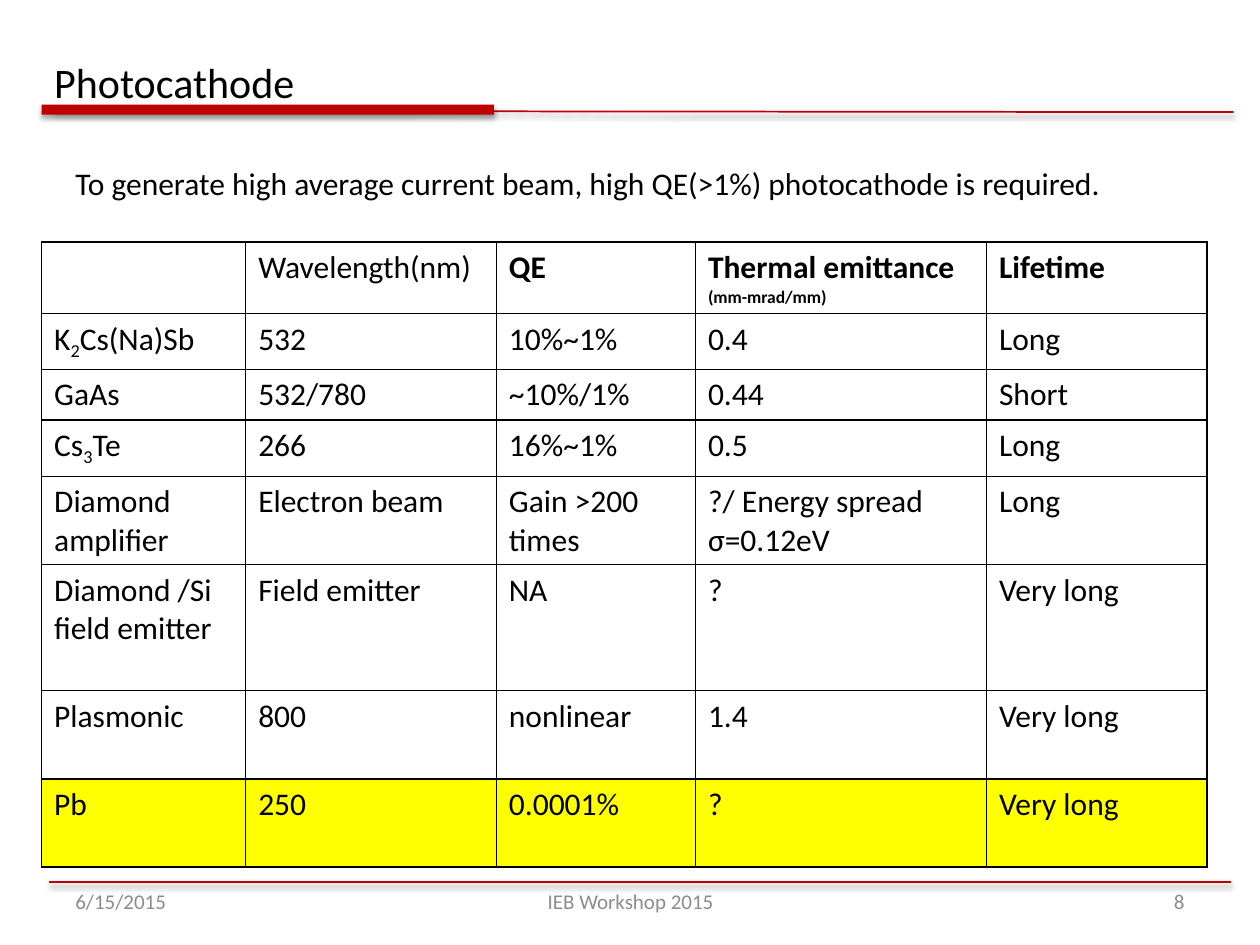
from dataclasses import dataclass
from lxml import etree
from pptx import Presentation
from pptx.dml.color import RGBColor as RGB
from pptx.enum.shapes import MSO_CONNECTOR as CONN, MSO_SHAPE as SHAPE
from pptx.enum.text import MSO_ANCHOR as ANCHOR, PP_ALIGN as ALIGN
from pptx.oxml import parse_xml
from pptx.oxml.ns import nsdecls, qn
from pptx.util import Inches, Pt


@dataclass(frozen=True)
class Theme:
    font: str = "Calibri"
    black: RGB = RGB(0, 0, 0)
    red: RGB = RGB(0xC0, 0, 0)
    gray: RGB = RGB(0x8C, 0x8C, 0x8C)
    yellow: RGB = RGB(0xFF, 0xFF, 0)
    title: int = 24
    body: int = 18
    footer: int = 12
    unit: int = 10


T = Theme()


def add_run(p, text, size=T.body, color=T.black, bold=False):
    r = p.add_run()
    r.text = text
    r.font.name, r.font.size, r.font.bold = T.font, Pt(size), bold
    r.font.color.rgb = color
    return r


def add_shadow(sp, dist, alpha):
    sp._element.spPr.append(parse_xml(
        f'<a:effectLst {nsdecls("a")}><a:outerShdw blurRad="{Pt(3.1)}" '
        f'dist="{Pt(dist)}" dir="5400000" rotWithShape="0"><a:srgbClr val="000000">'
        f'<a:alpha val="{alpha}000"/></a:srgbClr></a:outerShdw></a:effectLst>'))


prs = Presentation()
prs.slide_width, prs.slide_height = Inches(10), Inches(7.5)
s = prs.slides.add_slide(prs.slide_layouts[5])

# Red rules and title bar
for x1, y1, x2, y2 in [(0.42, 0.88, 9.79, 0.89), (0.39, 7, 9.77, 7)]:
    rule = s.shapes.add_connector(CONN.STRAIGHT, Inches(x1), Inches(y1), Inches(x2), Inches(y2))
    rule.line.color.rgb, rule.line.width = T.red, Pt(1)
    add_shadow(rule, 1.6, 38)
bar = s.shapes.add_shape(SHAPE.RECTANGLE, Inches(0.33), Inches(0.83), Inches(3.59), Inches(0.08))
bar.fill.solid()
bar.fill.fore_color.rgb = T.red
bar.line.fill.background()
add_shadow(bar, 1.8, 35)

# Title
title = s.shapes.title
title.left, title.top, title.width, title.height = (Inches(v) for v in (0.33, 0.42, 6.42, 0.45))
tf = title.text_frame
tf.vertical_anchor = ANCHOR.MIDDLE
p = tf.paragraphs[0]
p.alignment = ALIGN.LEFT
add_run(p, "Photocathode", T.title)

# Lead sentence and footer
texts = [
    (0.5, 1.25, 8.67, "To generate high average current beam, high QE(>1%) photocathode is required.",
     T.body, T.black, ALIGN.LEFT, ANCHOR.TOP),
    (0.5, 6.95, 2.33, "6/15/2015", T.footer, T.gray, ALIGN.LEFT, ANCHOR.MIDDLE),
    (3.42, 6.95, 3.17, "IEB Workshop 2015", T.footer, T.gray, ALIGN.CENTER, ANCHOR.MIDDLE),
    (7.17, 6.95, 2.33, "8", T.footer, T.gray, ALIGN.RIGHT, ANCHOR.MIDDLE),
]
for x, y, w, text, size, color, align, anchor in texts:
    tf = s.shapes.add_textbox(Inches(x), Inches(y), Inches(w), Inches(0.4)).text_frame
    tf.word_wrap, tf.vertical_anchor = True, anchor
    p = tf.paragraphs[0]
    p.alignment = align
    add_run(p, text, size, color)

# Photocathode table; a tuple holds text, subscript, text
rows = [
    ["", "Wavelength(nm)", "QE", "Thermal emittance ", "Lifetime"],
    [("K", "2", "Cs(Na)Sb"), "532", "10%~1%", "0.4", "Long"],
    ["GaAs", "532/780", "~10%/1%", "0.44", "Short"],
    [("Cs", "3", "Te"), "266", "16%~1%", "0.5", "Long"],
    ["Diamond amplifier", "Electron beam", "Gain >200 times", "?/ Energy spread σ=0.12eV", "Long"],
    ["Diamond /Si field emitter", "Field emitter", "NA", "?", "Very long"],
    ["Plasmonic", "800", "nonlinear", "1.4", "Very long"],
    ["Pb", "250", "0.0001%", "?", "Very long"],
]
widths = [1.62, 1.99, 1.58, 2.31, 1.75]
heights = [0.57, 0.44, 0.4, 0.45, 0.7, 1, 0.7, 0.7]
table = s.shapes.add_table(len(rows), len(widths), Inches(0.33), Inches(1.92),
                           Inches(sum(widths)), Inches(sum(heights))).table
table.first_row = table.horz_banding = False
for col, w in zip(table.columns, widths):
    col.width = Inches(w)
for row, h in zip(table.rows, heights):
    row.height = Inches(h)

for i, row in enumerate(rows):
    for j, content in enumerate(row):
        cell = table.cell(i, j)
        tcPr = cell._tc.get_or_add_tcPr()
        for side in ("lnL", "lnR", "lnT", "lnB"):
            ln = etree.SubElement(tcPr, qn(f"a:{side}"), w=str(Pt(1)))
            fill = etree.SubElement(ln, qn("a:solidFill"))
            etree.SubElement(fill, qn("a:srgbClr"), val=str(T.black))
        if row[0] == "Pb":
            cell.fill.solid()
            cell.fill.fore_color.rgb = T.yellow
        else:
            cell.fill.background()
        p = cell.text_frame.paragraphs[0]
        parts = content if isinstance(content, tuple) else (content,)
        for k, part in enumerate(parts):
            if part:
                r = add_run(p, part, bold=i == 0 and j > 1)
                if k == 1:
                    r.font._element.set("baseline", "-25000")
add_run(table.cell(0, 3).text_frame.paragraphs[0], "(mm-mrad/mm)", T.unit, bold=True)

prs.save("out.pptx")
